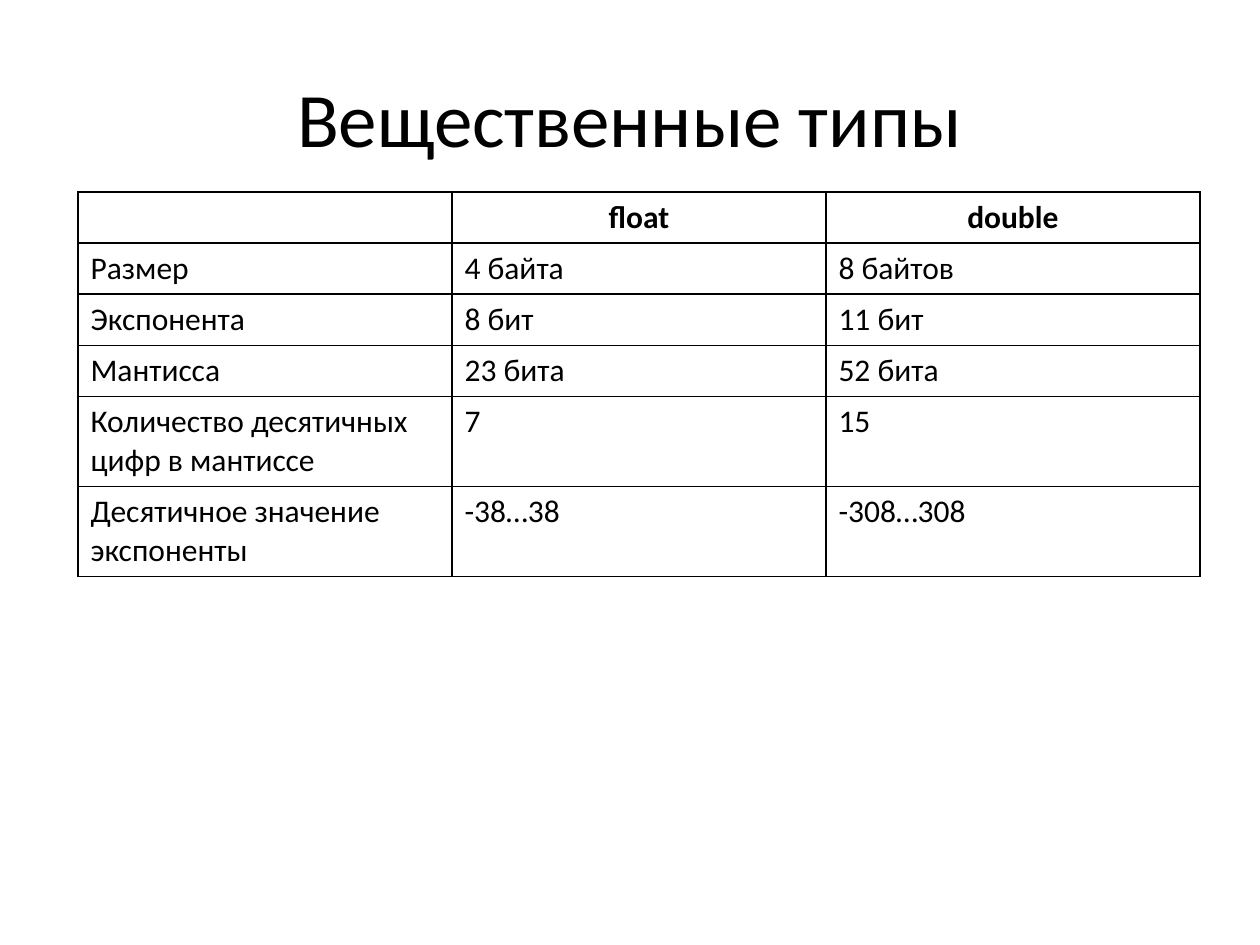
import pptx
import pptx.dml.color
import pptx.enum.text
import pptx.oxml
import pptx.oxml.ns
import pptx.util

PX = 914400 // 126
BLACK = pptx.dml.color.RGBColor(0, 0, 0)
FONT = "Calibri"
ROWS = [
    ("", "float", "double"),
    ("Размер", "4 байта", "8 байтов"),
    ("Экспонента", "8 бит", "11 бит"),
    ("Мантисса", "23 бита", "52 бита"),
    ("Количество десятичных цифр в мантиссе", "7", "15"),
    ("Десятичное значение экспоненты", "-38…38", "-308…308"),
]
ROW_HEIGHTS = [51, 51, 51, 51, 90, 90]


def format_text(frame, size, bold, align):
    for para in frame.paragraphs:
        para.alignment = align
        for span in para.runs:
            span.font.name = FONT
            span.font.size = pptx.util.Pt(size)
            span.font.bold = bold
            span.font.color.rgb = BLACK


def add_borders(cell):
    properties = cell._tc.get_or_add_tcPr()
    namespace = pptx.oxml.ns.nsdecls("a")
    for position, side in enumerate(("lnL", "lnR", "lnT", "lnB")):
        line = pptx.oxml.parse_xml(
            f'<a:{side} {namespace} w="{pptx.util.Pt(1)}"><a:solidFill>'
            f'<a:srgbClr val="{BLACK}"/></a:solidFill></a:{side}>'
        )
        properties.insert(position, line)


def place_title(page, left, top, width, height):
    title = page.shapes.title
    title.left, title.top = left * PX, top * PX
    title.width, title.height = width * PX, height * PX
    frame = title.text_frame
    frame.text = "Вещественные типы"
    frame.vertical_anchor = pptx.enum.text.MSO_ANCHOR.MIDDLE
    format_text(frame, 44, False, pptx.enum.text.PP_ALIGN.CENTER)


def place_table(page, left, top, width):
    height = sum(ROW_HEIGHTS)
    table = page.shapes.add_table(
        len(ROWS), len(ROWS[0]), left * PX, top * PX, width * PX, height * PX
    ).table
    for row, row_height in zip(table.rows, ROW_HEIGHTS):
        row.height = row_height * PX
    for row_index, texts in enumerate(ROWS):
        header = row_index == 0
        align = pptx.enum.text.PP_ALIGN.CENTER if header else pptx.enum.text.PP_ALIGN.LEFT
        for column_index, text in enumerate(texts):
            cell = table.cell(row_index, column_index)
            cell.text_frame.text = text
            cell.fill.background()
            format_text(cell.text_frame, 18, header, align)
            add_borders(cell)


def main():
    deck = pptx.Presentation()
    deck.slide_width, deck.slide_height = 1260 * PX, 945 * PX
    page = deck.slides.add_slide(deck.slide_layouts[5])
    place_title(page, 63, 38, 1134, 158)
    place_table(page, 78, 192, 1122)
    deck.save("out.pptx")


if __name__ == "__main__":
    main()
